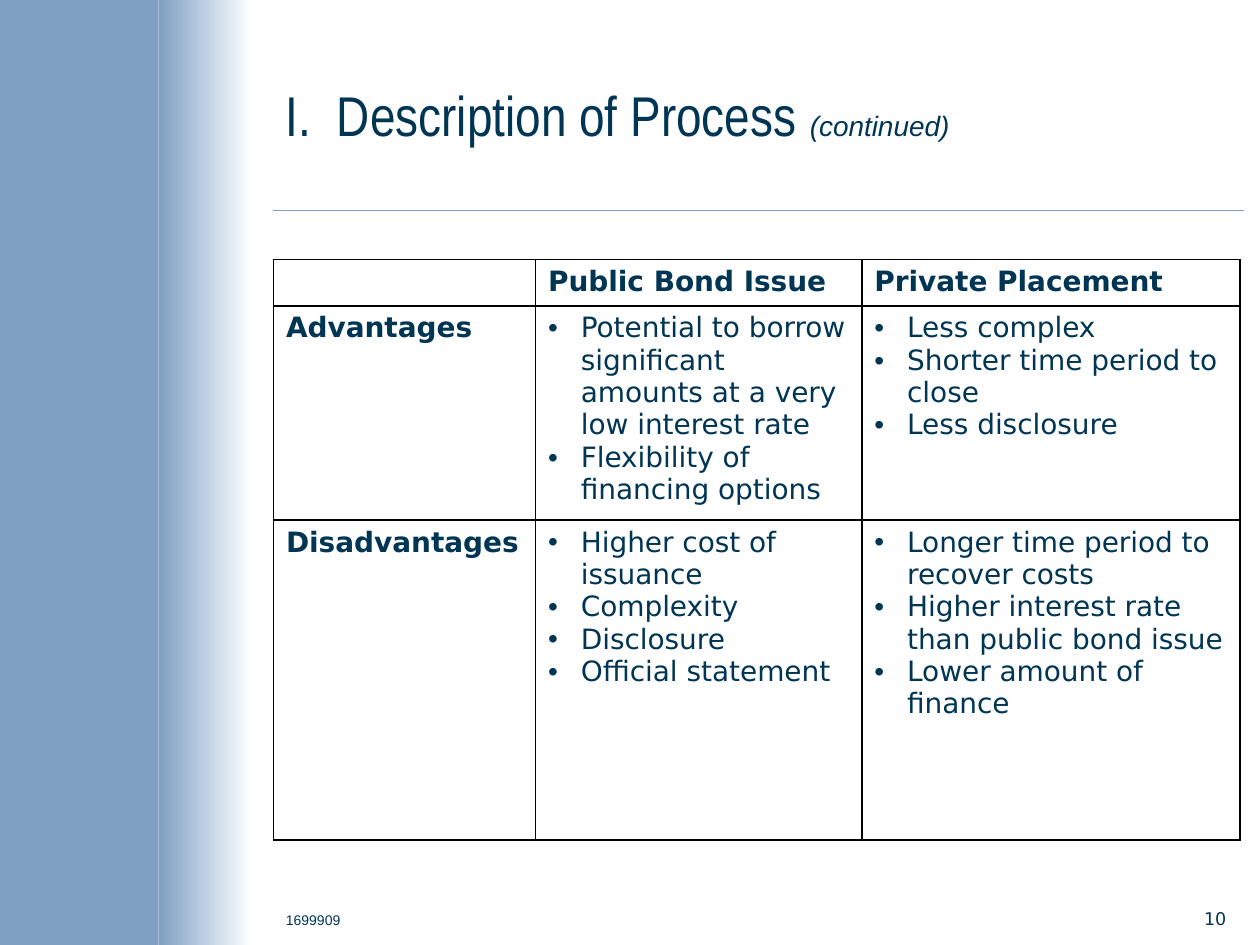
from dataclasses import dataclass

from lxml import etree
from pptx import Presentation
from pptx.dml.color import RGBColor
from pptx.enum.shapes import MSO_CONNECTOR, MSO_SHAPE
from pptx.enum.text import MSO_ANCHOR, PP_ALIGN
from pptx.oxml.ns import qn
from pptx.util import Inches, Pt

RECTANGLE = MSO_SHAPE.RECTANGLE
STRAIGHT = MSO_CONNECTOR.STRAIGHT
MIDDLE, BOTTOM = MSO_ANCHOR.MIDDLE, MSO_ANCHOR.BOTTOM
LEFT, RIGHT = PP_ALIGN.LEFT, PP_ALIGN.RIGHT


@dataclass(frozen=True)
class Theme:
    ink: str = "003554"
    accent: str = "7FA0C3"
    paper: str = "FFFFFF"
    border: str = "000000"
    title_font: str = "Arial Narrow"
    label_font: str = "Arial"
    body_font: str = "DejaVu Sans"
    title_size: float = 32
    body_size: float = 16
    number_size: float = 10
    reference_size: float = 8
    border_width: float = 1
    rule_width: float = 0.25


@dataclass(frozen=True)
class Box:
    left: float
    top: float
    width: float
    height: float

    def lengths(self) -> tuple:
        return tuple(Inches(v) for v in (self.left, self.top, self.width, self.height))


@dataclass(frozen=True)
class ComparisonRow:
    heading: str
    public_bond: tuple[str, ...]
    private_placement: tuple[str, ...]
    height: float


THEME = Theme()
CONTENT_LEFT = 2.17
BULLET_INDENT = 0.26
COLUMN_WIDTHS = (2.08, 2.59, 3.0)
HEADER_HEIGHT = 0.36
HEADERS = ("", "Public Bond Issue", "Private Placement")
COMPARISON = (
    ComparisonRow(
        "Advantages",
        ("Potential to borrow significant amounts at a very low interest rate",
         "Flexibility of financing options"),
        ("Less complex", "Shorter time period to close", "Less disclosure"),
        1.64,
    ),
    ComparisonRow(
        "Disadvantages",
        ("Higher cost of issuance", "Complexity", "Disclosure", "Official statement"),
        ("Longer time period to recover costs",
         "Higher interest rate than public bond issue", "Lower amount of finance"),
        2.54,
    ),
)


def rgb(color: str) -> RGBColor:
    return RGBColor.from_string(color)


def add_text(paragraph, text: str, *, size: float = THEME.body_size,
             font: str = THEME.body_font, bold: bool = False,
             italic: bool = False) -> None:
    run = paragraph.add_run()
    run.text = text
    run.font.size = Pt(size)
    run.font.name = font
    run.font.bold = bold
    run.font.italic = italic
    run.font.color.rgb = rgb(THEME.ink)


def add_text_box(slide, box: Box, anchor, align=LEFT):
    """Add an empty wrapping text box and return its first paragraph."""
    frame = slide.shapes.add_textbox(*box.lengths()).text_frame
    frame.word_wrap = True
    frame.vertical_anchor = anchor
    paragraph = frame.paragraphs[0]
    paragraph.alignment = align
    return paragraph


def add_band(slide, box: Box, fade_to: str | None = None) -> None:
    band = slide.shapes.add_shape(RECTANGLE, *box.lengths())
    band.shadow.inherit = False
    band.line.fill.background()
    if fade_to is None:
        band.fill.solid()
        band.fill.fore_color.rgb = rgb(THEME.accent)
        return
    band.fill.gradient()
    band.fill.gradient_angle = 0
    for stop, color in zip(band.fill.gradient_stops, (THEME.accent, fade_to)):
        stop.color.rgb = rgb(color)


def add_rule(slide, left: float, right: float, top: float) -> None:
    rule = slide.shapes.add_connector(
        STRAIGHT, Inches(left), Inches(top), Inches(right), Inches(top))
    rule.line.color.rgb = rgb(THEME.accent)
    rule.line.width = Pt(THEME.rule_width)
    etree.SubElement(rule._element.spPr, qn("a:effectLst"))


def add_bullet(paragraph) -> None:
    properties = paragraph._p.get_or_add_pPr()
    properties.set("marL", str(Inches(BULLET_INDENT)))
    properties.set("indent", str(-Inches(BULLET_INDENT)))
    etree.SubElement(properties, qn("a:buFont"), typeface=THEME.label_font)
    etree.SubElement(properties, qn("a:buChar"), char="•")


def style_cell(cell) -> None:
    """Give the cell four solid borders and no fill."""
    properties = cell._tc.get_or_add_tcPr()
    for side in ("a:lnL", "a:lnR", "a:lnT", "a:lnB"):
        line = etree.SubElement(properties, qn(side), w=str(Pt(THEME.border_width)))
        fill = etree.SubElement(line, qn("a:solidFill"))
        etree.SubElement(fill, qn("a:srgbClr"), val=THEME.border)
    cell.fill.background()


def fill_heading(cell, text: str) -> None:
    paragraph = cell.text_frame.paragraphs[0]
    if text:
        add_text(paragraph, text, bold=True)
    else:
        etree.SubElement(paragraph._p, qn("a:endParaRPr"),
                         sz=str(int(THEME.body_size * 100)))


def fill_bullets(cell, points: tuple[str, ...]) -> None:
    frame = cell.text_frame
    for index, point in enumerate(points):
        paragraph = frame.add_paragraph() if index else frame.paragraphs[0]
        add_bullet(paragraph)
        add_text(paragraph, point)


def add_comparison(slide, left: float, top: float) -> None:
    heights = (HEADER_HEIGHT, *(row.height for row in COMPARISON))
    box = Box(left, top, sum(COLUMN_WIDTHS), sum(heights))
    table = slide.shapes.add_table(
        len(heights), len(COLUMN_WIDTHS), *box.lengths()).table
    table.first_row = table.horz_banding = False
    for column, width in zip(table.columns, COLUMN_WIDTHS):
        column.width = Inches(width)
    for row, height in zip(table.rows, heights):
        row.height = Inches(height)
    for cell in table.iter_cells():
        style_cell(cell)
    for index, header in enumerate(HEADERS):
        fill_heading(table.cell(0, index), header)
    for index, row in enumerate(COMPARISON, start=1):
        fill_heading(table.cell(index, 0), row.heading)
        fill_bullets(table.cell(index, 1), row.public_bond)
        fill_bullets(table.cell(index, 2), row.private_placement)


def main() -> None:
    presentation = Presentation()
    presentation.slide_width, presentation.slide_height = Inches(10), Inches(7.5)
    slide = presentation.slides.add_slide(presentation.slide_layouts[6])

    add_band(slide, Box(0, 0, 1.26, 7.5))
    add_band(slide, Box(1.26, 0, 0.74, 7.5), fade_to=THEME.paper)
    add_rule(slide, CONTENT_LEFT, 9.87, 1.67)

    page_number = add_text_box(slide, Box(9.08, 7.17, 0.75, 0.25), BOTTOM, RIGHT)
    add_text(page_number, "10", size=THEME.number_size)

    title = add_text_box(slide, Box(CONTENT_LEFT, 0.28, 7.68, 1.25), MIDDLE)
    add_text(title, "I.  Description of Process ",
             size=THEME.title_size, font=THEME.title_font)
    add_text(title, "(continued)", font=THEME.label_font, italic=True)

    add_comparison(slide, CONTENT_LEFT, 2.06)

    reference = add_text_box(slide, Box(CONTENT_LEFT, 7.17, 0.67, 0.25), BOTTOM)
    add_text(reference, "1699909", size=THEME.reference_size, font=THEME.label_font)

    presentation.save("out.pptx")


if __name__ == "__main__":
    main()
